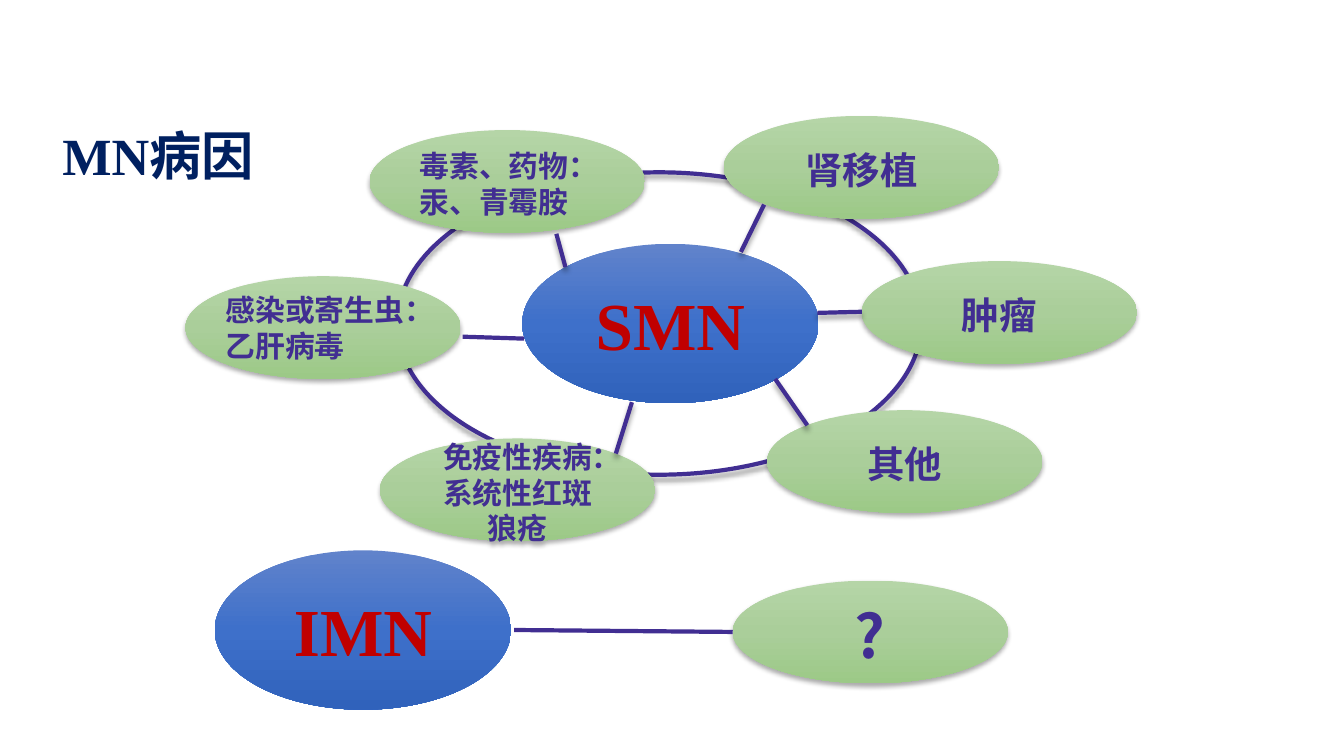
from dataclasses import dataclass
from typing import Any

from lxml.etree import SubElement
from pptx import Presentation
from pptx.dml.color import RGBColor
from pptx.enum.shapes import MSO_CONNECTOR, MSO_SHAPE
from pptx.enum.text import MSO_ANCHOR, MSO_AUTO_SIZE, PP_ALIGN
from pptx.oxml.ns import qn
from pptx.util import Pt

SANS = "Noto Sans CJK SC"
SERIF = "Times New Roman"
INK = "412E92"
RED = "C00000"
NAVY = "002060"
BLUE = ("6183CB", "3E70CA", "3062BB")
GREEN = ("B5D5A7", "AACE9A", "9CC987")


@dataclass(frozen=True)
class Shade:
    alpha: int
    blur: float
    drop: float


LINE = Shade(40, 4, 3)
SOFT = Shade(32, 3.5, 2.2)


@dataclass(frozen=True)
class Hub:
    text: str
    left: float
    top: float


@dataclass(frozen=True)
class Topic:
    text: str
    left: float
    top: float
    size: float = 26.7
    align: PP_ALIGN = PP_ALIGN.CENTER
    inset: tuple[float, float] = (7.2, 3.6)


@dataclass(frozen=True)
class Spoke:
    x1: float
    y1: float
    x2: float
    y2: float
    shade: Shade | None = LINE


HUBS = [Hub("SMN", 373, 174.2), Hub("IMN", 153.4, 393.1)]

TOPICS = [
    Topic("免疫性疾病：系统性红斑狼疮", 271.4, 313.2, 21.3),
    Topic("感染或寄生虫：乙肝病毒", 132.5, 197.3, 21.3, PP_ALIGN.LEFT, (0, 0)),
    Topic("毒素、药物：汞、青霉胺", 264, 92.9, 21.3, PP_ALIGN.LEFT),
    Topic("肾移植", 517, 82.8),
    Topic("肿瘤", 615.6, 186.5),
    Topic("其他", 547.9, 293),
    Topic("?", 523.4, 414.7, 42.7),
]

SPOKES = [
    Spoke(397.4, 167, 403.9, 190.8),
    Spoke(545.8, 146.2, 529.2, 180),
    Spoke(330.5, 240.5, 374.4, 241.9, None),
    Spoke(439.9, 324, 451.4, 287.3),
    Spoke(615.6, 222.7, 583.9, 223.5),
    Spoke(576.7, 303.8, 553.7, 270.7),
    Spoke(367.2, 450, 523.4, 451.4, None),
]


def color(code: str) -> RGBColor:
    return RGBColor.from_string(code)


def cast(props: Any, shade: Shade | None) -> None:
    for old in props.findall(qn("a:effectLst")):
        props.remove(old)
    group = SubElement(props, qn("a:effectLst"))
    if shade is None:
        return
    outer = SubElement(group, qn("a:outerShdw"), blurRad=str(Pt(shade.blur)),
                       dist=str(Pt(shade.drop)), dir="5400000", rotWithShape="0")
    tone = SubElement(outer, qn("a:srgbClr"), val="000000")
    SubElement(tone, qn("a:alpha"), val=str(shade.alpha * 1000))


def blend(shape: Any, codes: tuple[str, ...]) -> None:
    shape.fill.gradient()
    grad = shape._element.spPr.find(qn("a:gradFill"))
    for part in list(grad):
        grad.remove(part)
    stops = SubElement(grad, qn("a:gsLst"))
    for rank, code in enumerate(codes):
        stop = SubElement(stops, qn("a:gs"), pos=str(rank * 50000))
        SubElement(stop, qn("a:srgbClr"), val=code)
    SubElement(grad, qn("a:lin"), ang="5400000", scaled="0")


def label(shape: Any, text: str, face: str, size: float, code: str,
          align: PP_ALIGN) -> None:
    frame = shape.text_frame
    frame.text = text
    frame.word_wrap = True
    para = frame.paragraphs[0]
    para.alignment = align
    run = para.runs[0]
    run.font.size = Pt(size)
    run.font.bold = True
    run.font.color.rgb = color(code)
    run.font.name = face
    SubElement(run.font._element, qn("a:ea"), typeface=SANS)


def oval(slide: Any, left: float, top: float, width: float, height: float) -> Any:
    shape = slide.shapes.add_shape(
        MSO_SHAPE.OVAL, Pt(left), Pt(top), Pt(width), Pt(height))
    shape.shadow.inherit = False
    return shape


def add_ring(slide: Any) -> None:
    ring = oval(slide, 283.7, 123.1, 374.4, 216)
    ring.fill.background()
    ring.line.color.rgb = color(INK)
    ring.line.width = Pt(3)
    cast(ring._element.spPr, LINE)


def add_hub(slide: Any, hub: Hub) -> None:
    shape = oval(slide, hub.left, hub.top, 211.7, 113.8)
    blend(shape, BLUE)
    shape.line.fill.background()
    shape.text_frame.vertical_anchor = MSO_ANCHOR.MIDDLE
    label(shape, hub.text, SERIF, 48, RED, PP_ALIGN.CENTER)


def add_topic(slide: Any, topic: Topic) -> None:
    shape = oval(slide, topic.left, topic.top, 196.6, 73.4)
    blend(shape, GREEN)
    shape.line.fill.background()
    cast(shape._element.spPr, SOFT)
    frame = shape.text_frame
    side, head = topic.inset
    frame.margin_left = frame.margin_right = Pt(side)
    frame.margin_top, frame.margin_bottom = Pt(head), Pt(0)
    frame.vertical_anchor = MSO_ANCHOR.MIDDLE
    label(shape, topic.text, SANS, topic.size, INK, topic.align)


def add_spoke(slide: Any, spoke: Spoke) -> None:
    line = slide.shapes.add_connector(
        MSO_CONNECTOR.STRAIGHT, Pt(spoke.x1), Pt(spoke.y1),
        Pt(spoke.x2), Pt(spoke.y2))
    line.line.color.rgb = color(INK)
    line.line.width = Pt(3)
    cast(line._element.spPr, spoke.shade)


def add_title(slide: Any) -> None:
    title = slide.shapes.title
    title.left, title.top = Pt(18.7), Pt(84.2)
    title.width, title.height = Pt(650), Pt(52.6)
    frame = title.text_frame
    frame.auto_size = MSO_AUTO_SIZE.NONE
    frame.vertical_anchor = MSO_ANCHOR.TOP
    frame.margin_left = Pt(25.9)
    label(title, "MN病因", SERIF, 37.3, NAVY, PP_ALIGN.LEFT)


def main() -> None:
    deck = Presentation()
    deck.slide_width, deck.slide_height = Pt(960), Pt(540)
    slide = deck.slides.add_slide(deck.slide_layouts[5])
    add_title(slide)
    add_ring(slide)
    for hub in HUBS:
        add_hub(slide, hub)
    for topic in TOPICS:
        add_topic(slide, topic)
    for spoke in SPOKES:
        add_spoke(slide, spoke)
    deck.save("out.pptx")


if __name__ == "__main__":
    main()
